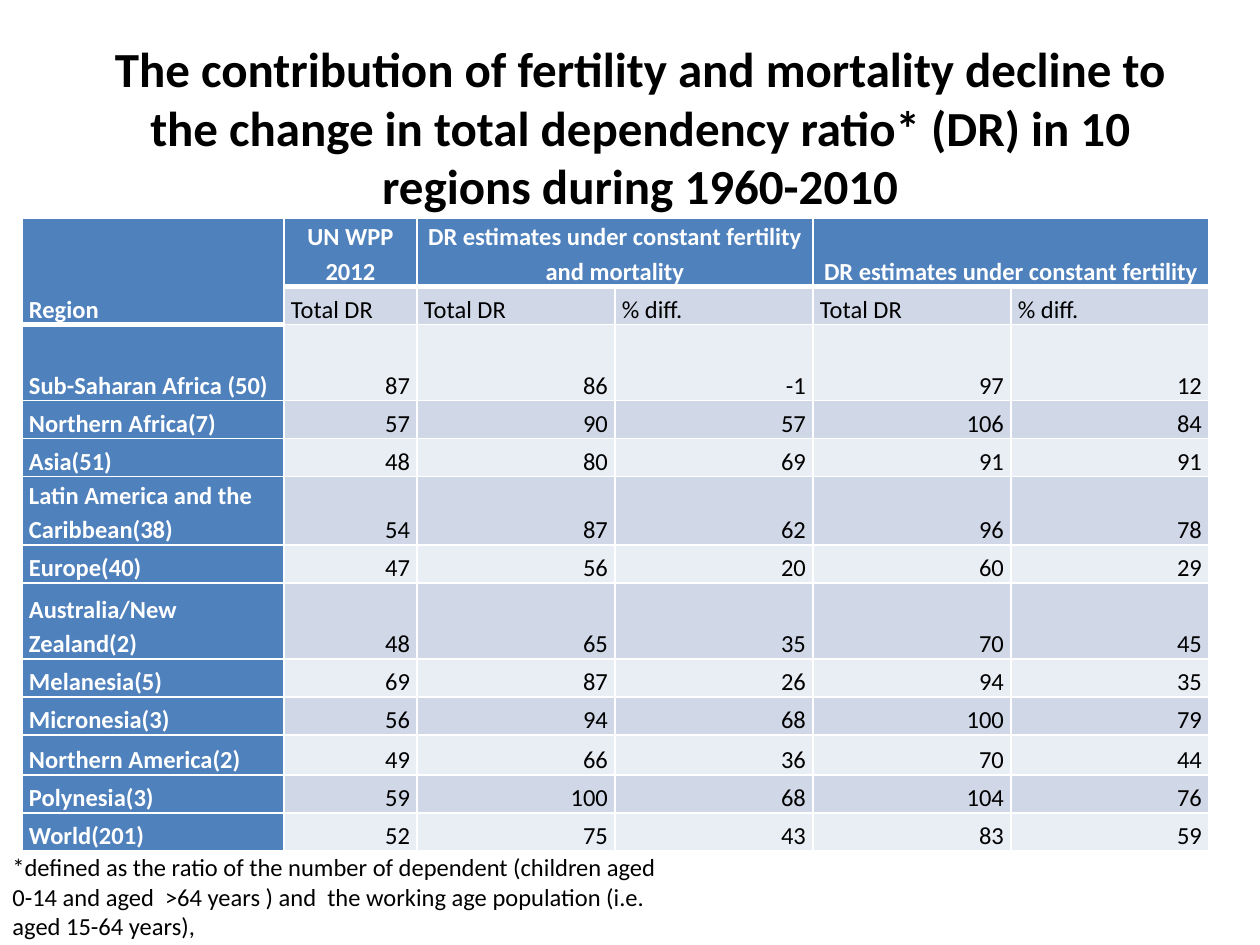
import lxml.etree
import pptx
import pptx.dml.color
import pptx.enum.text
import pptx.oxml.ns
import pptx.util

COLORS = {"header": "4F81BD", "dark": "D0D8E8", "light": "E9EDF4",
          "white": "FFFFFF", "black": "000000"}
ALIGN = pptx.enum.text.PP_ALIGN
ANCHOR = pptx.enum.text.MSO_ANCHOR


def px(length):
    return pptx.util.Emu(round(length * 914400 / 126))


def set_text(frame, text, size, color, bold, align, line_spacing=1.0):
    frame.text = text
    paragraph = frame.paragraphs[0]
    paragraph.alignment = align
    paragraph.line_spacing = line_spacing
    font_format = {"name": "Calibri", "size": pptx.util.Pt(size), "bold": bold}
    for name, value in font_format.items():
        setattr(paragraph.runs[0].font, name, value)
    paragraph.runs[0].font.color.rgb = pptx.dml.color.RGBColor.from_string(COLORS[color])


presentation = pptx.Presentation()
presentation.slide_width = px(1260)
presentation.slide_height = px(945)
slide = presentation.slides.add_slide(presentation.slide_layouts[5])

title = slide.shapes.title
title_box = {"left": px(73), "top": px(32), "width": px(1134), "height": px(158)}
for name, value in title_box.items():
    setattr(title, name, value)
title.text_frame.auto_size = pptx.enum.text.MSO_AUTO_SIZE.NONE
title.text_frame.vertical_anchor = ANCHOR.TOP
set_text(title.text_frame,
         "The contribution of fertility and mortality decline to the change in total "
         "dependency ratio* (DR) in 10 regions during 1960-2010",
         28, "black", True, ALIGN.CENTER)

rows = [
    ["Region", "UN WPP 2012", "DR estimates under constant fertility and mortality", "",
     "DR estimates under constant fertility", ""],
    ["", "Total DR", "Total DR", "% diff.", "Total DR", "% diff."],
    ["Sub-Saharan Africa (50)", 87, 86, -1, 97, 12],
    ["Northern Africa(7)", 57, 90, 57, 106, 84],
    ["Asia(51)", 48, 80, 69, 91, 91],
    ["Latin America and the Caribbean(38)", 54, 87, 62, 96, 78],
    ["Europe(40)", 47, 56, 20, 60, 29],
    ["Australia/New Zealand(2)", 48, 65, 35, 70, 45],
    ["Melanesia(5)", 69, 87, 26, 94, 35],
    ["Micronesia(3)", 56, 94, 68, 100, 79],
    ["Northern America(2)", 49, 66, 36, 70, 44],
    ["Polynesia(3)", 59, 100, 68, 104, 76],
    ["World(201)", 52, 75, 43, 83, 59],
]
column_widths = [262, 133] + [198] * 4
row_heights = [68, 38, 76, 38, 38, 68, 38, 76, 38, 38, 40, 38, 38]

table = slide.shapes.add_table(len(rows), len(column_widths), px(22), px(218),
                               px(sum(column_widths)), px(sum(row_heights))).table
table.first_row = False
table.horz_banding = False
for column, width in zip(table.columns, column_widths):
    column.width = px(width)
for row, height in zip(table.rows, row_heights):
    row.height = px(height)
for first, last in [((0, 0), (1, 0)), ((0, 2), (0, 3)), ((0, 4), (0, 5))]:
    table.cell(*first).merge(table.cell(*last))

cell_format = {"margin_left": px(7), "margin_right": px(7), "margin_top": 0,
               "margin_bottom": 0, "vertical_anchor": ANCHOR.BOTTOM}
for row_index, values in enumerate(rows):
    for column_index, value in enumerate(values):
        cell = table.cell(row_index, column_index)
        is_header = row_index == 0 or column_index == 0
        for name, setting in cell_format.items():
            setattr(cell, name, setting)

        header_end = 1 if column_index == 0 else 0
        border_widths = {"lnL": 1, "lnR": 1,
                         "lnT": 3 if row_index == header_end + 1 else 1,
                         "lnB": 3 if row_index in (0, header_end) else 1}
        properties = cell._tc.get_or_add_tcPr()
        for side, width in border_widths.items():
            line = lxml.etree.SubElement(properties, pptx.oxml.ns.qn("a:" + side),
                                         w=str(pptx.util.Pt(width)))
            fill = lxml.etree.SubElement(line, pptx.oxml.ns.qn("a:solidFill"))
            lxml.etree.SubElement(fill, pptx.oxml.ns.qn("a:srgbClr"), val=COLORS["white"])

        band = "header" if is_header else "dark" if row_index % 2 else "light"
        cell.fill.solid()
        cell.fill.fore_color.rgb = pptx.dml.color.RGBColor.from_string(COLORS[band])

        if value == "":
            continue
        if isinstance(value, int):
            align = ALIGN.RIGHT
        elif row_index == 0 and column_index > 0:
            align = ALIGN.CENTER
        else:
            align = ALIGN.LEFT
        set_text(cell.text_frame, str(value), 14, "white" if is_header else "black",
                 is_header, align, 1.15)

footnote = slide.shapes.add_textbox(px(0), px(846), px(672), px(102))
footnote.text_frame.word_wrap = True
set_text(footnote.text_frame,
         "*defined as the ratio of the number of dependent (children aged 0-14 and aged  "
         ">64 years ) and  the working age population (i.e. aged 15-64 years),",
         14, "black", False, ALIGN.LEFT)

presentation.save("out.pptx")
